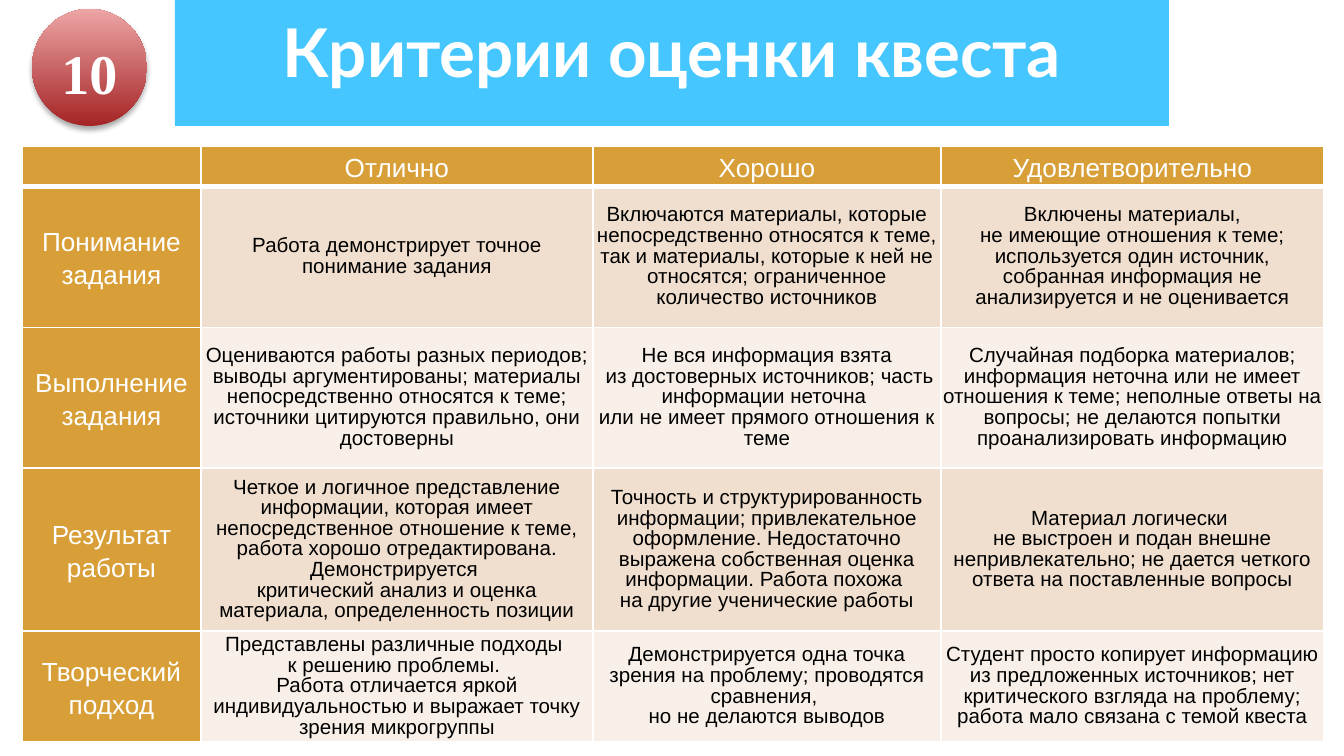
import pptx
import pptx.dml.color
import pptx.enum.shapes
import pptx.enum.text
import pptx.oxml
import pptx.oxml.ns
import pptx.util

RGBColor = pptx.dml.color.RGBColor
WHITE = RGBColor(0xFF, 0xFF, 0xFF)
BLACK = RGBColor(0x00, 0x00, 0x00)
SKY = RGBColor(0x00, 0xB2, 0xFF)
GOLD = RGBColor(0xD8, 0x9F, 0x39)
BANDS = (RGBColor(0xF0, 0xDF, 0xCE), RGBColor(0xF8, 0xF0, 0xE8))
DARK_RED = RGBColor(0xA5, 0x24, 0x25)
PINK = RGBColor(0xED, 0xA5, 0xA5)

CENTER = pptx.enum.text.PP_ALIGN.CENTER
TOP = pptx.enum.text.MSO_ANCHOR.TOP
MIDDLE = pptx.enum.text.MSO_ANCHOR.MIDDLE
SHAPES = pptx.enum.shapes.MSO_SHAPE
Pt = pptx.util.Pt
NAMESPACE = pptx.oxml.ns.nsdecls("a")

# Format values: paragraph attributes and font attributes
HEADING = (
    {"alignment": CENTER, "line_spacing": 1.15, "space_after": Pt(3.8)},
    {"size": Pt(14), "name": "Arial"},
    WHITE,
)
BODY = (
    {"alignment": CENTER, "line_spacing": 0.9, "space_after": Pt(3.8)},
    {"size": Pt(11), "name": "Arial"},
    BLACK,
)
TITLE = (
    {"alignment": CENTER},
    {"size": Pt(36), "name": "Lato", "bold": True},
    WHITE,
)
BADGE = (
    {"alignment": CENTER, "line_spacing": 1.15, "space_after": Pt(7.5)},
    {"size": Pt(30), "name": "Times New Roman", "bold": True},
    WHITE,
)

COLUMN_WIDTHS = (179, 392, 348, 383)
ROW_HEIGHTS = (33, 141, 141, 163, 101)
CRITERIA = (
    ("", "Отлично", "Хорошо", "Удовлетворительно"),
    (
        "Понимание задания",
        "Работа демонстрирует точное понимание задания",
        "Включаются материалы, которые непосредственно относятся к теме, "
        "так и материалы, которые к ней не относятся; ограниченное "
        "количество источников",
        "Включены материалы,\nне имеющие отношения к теме; используется один "
        "источник, собранная информация не анализируется и не оценивается",
    ),
    (
        "Выполнение задания",
        "Оцениваются работы разных периодов; выводы аргументированы; "
        "материалы непосредственно относятся к теме; источники цитируются "
        "правильно, они достоверны",
        "Не вся информация взята\n из достоверных источников; часть "
        "информации неточна \nили не имеет прямого отношения к теме",
        "Случайная подборка материалов; информация неточна или не имеет "
        "отношения к теме; неполные ответы на вопросы; не делаются попытки "
        "проанализировать информацию",
    ),
    (
        "Результат работы",
        "Четкое и логичное представление информации, которая имеет "
        "непосредственное отношение к теме, работа хорошо отредактирована. "
        "Демонстрируется \nкритический анализ и оценка материала, "
        "определенность позиции",
        "Точность и структурированность информации; привлекательное "
        "оформление. Недостаточно выражена собственная оценка информации. "
        "Работа похожа \nна другие ученические работы",
        "Материал логически \nне выстроен и подан внешне непривлекательно; "
        "не дается четкого ответа на поставленные вопросы",
    ),
    (
        "Творческий подход",
        "Представлены различные подходы \nк решению проблемы. \nРабота "
        "отличается яркой индивидуальностью и выражает точку зрения "
        "микрогруппы",
        "Демонстрируется одна точка зрения на проблему; проводятся "
        "сравнения, \nно не делаются выводов",
        "Студент просто копирует информацию из предложенных источников; нет "
        "критического взгляда на проблему; работа мало связана с темой "
        "квеста",
    ),
)


def px(value):
    return round(value * 914400 / 134.4)


def box(*lengths):
    return [px(length) for length in lengths]


def set_attributes(target, values):
    for name, value in values.items():
        setattr(target, name, value)


def write_text(frame, text, text_format):
    paragraph_values, font_values, color = text_format
    paragraph = frame.paragraphs[0]
    paragraph.text = text
    set_attributes(paragraph, paragraph_values)
    # An empty cell still needs a sized run to keep its row low
    for run in paragraph.runs or [paragraph.add_run()]:
        set_attributes(run.font, font_values)
        run.font.color.rgb = color


def set_margins(target, horizontal, vertical):
    for side in ("left", "right"):
        setattr(target, f"margin_{side}", px(horizontal))
    for side in ("top", "bottom"):
        setattr(target, f"margin_{side}", px(vertical))


def add_plain_shape(slide, kind, bounds):
    shape = slide.shapes.add_shape(kind, *box(*bounds))
    shape.shadow.inherit = False
    shape.line.fill.background()
    return shape


def add_title(slide, text):
    band = add_plain_shape(slide, SHAPES.RECTANGLE, (175, 0, 994, 126))
    band.fill.solid()
    band.fill.fore_color.rgb = SKY
    color = band.fill._xPr.find(".//" + pptx.oxml.ns.qn("a:srgbClr"))
    color.append(pptx.oxml.parse_xml(f'<a:alpha {NAMESPACE} val="73000"/>'))

    frame = slide.shapes.add_textbox(*box(179, -3, 986, 129)).text_frame
    set_attributes(frame, {"word_wrap": True, "vertical_anchor": TOP})
    set_margins(frame, 13, 13)
    write_text(frame, text, TITLE)


def add_borders(cell, bottom_width):
    properties = cell._tc.get_or_add_tcPr()
    for side, width in zip("LRTB", (1, 1, 1, bottom_width)):
        properties.append(pptx.oxml.parse_xml(
            f'<a:ln{side} {NAMESPACE} w="{Pt(width)}"><a:solidFill>'
            f'<a:srgbClr val="{WHITE}"/></a:solidFill></a:ln{side}>'))


def add_criteria_table(slide):
    bounds = box(22, 146, sum(COLUMN_WIDTHS), sum(ROW_HEIGHTS))
    table = slide.shapes.add_table(
        len(ROW_HEIGHTS), len(COLUMN_WIDTHS), *bounds).table
    set_attributes(table, {"first_row": False, "horz_banding": False})
    for column, width in zip(table.columns, COLUMN_WIDTHS):
        column.width = px(width)
    for row_index, texts in enumerate(CRITERIA):
        table.rows[row_index].height = px(ROW_HEIGHTS[row_index])
        for column_index, text in enumerate(texts):
            cell = table.cell(row_index, column_index)
            is_heading = row_index == 0 or column_index == 0
            cell.vertical_anchor = MIDDLE
            set_margins(cell, 0, 0)
            add_borders(cell, 3 if row_index == 0 else 1)
            cell.fill.solid()
            cell.fill.fore_color.rgb = (
                GOLD if is_heading else BANDS[(row_index - 1) % 2])
            write_text(cell.text_frame, text, HEADING if is_heading else BODY)


def add_badge(slide, text):
    badge = add_plain_shape(slide, SHAPES.OVAL, (32, 9, 115, 117))
    badge.fill.gradient()
    badge.fill.gradient_angle = 90
    for stop, color in zip(badge.fill.gradient_stops, (DARK_RED, PINK)):
        stop.color.rgb = color
    # Soft shadow below the circle
    effects = badge._element.spPr.find(pptx.oxml.ns.qn("a:effectLst"))
    effects.append(pptx.oxml.parse_xml(
        f'<a:outerShdw {NAMESPACE} blurRad="{Pt(3.1)}" dist="{Pt(1.8)}" '
        f'dir="5400000" rotWithShape="0"><a:srgbClr val="{BLACK}">'
        '<a:alpha val="35000"/></a:srgbClr></a:outerShdw>'))
    badge.text_frame.vertical_anchor = MIDDLE
    set_margins(badge.text_frame, 9, 5)
    write_text(badge.text_frame, text, BADGE)


def main():
    presentation = pptx.Presentation()
    presentation.slide_width = px(1344)
    presentation.slide_height = px(756)
    slide = presentation.slides.add_slide(presentation.slide_layouts[6])
    add_title(slide, "Критерии оценки квеста")
    add_criteria_table(slide)
    add_badge(slide, "10")
    presentation.save("out.pptx")


if __name__ == "__main__":
    main()
